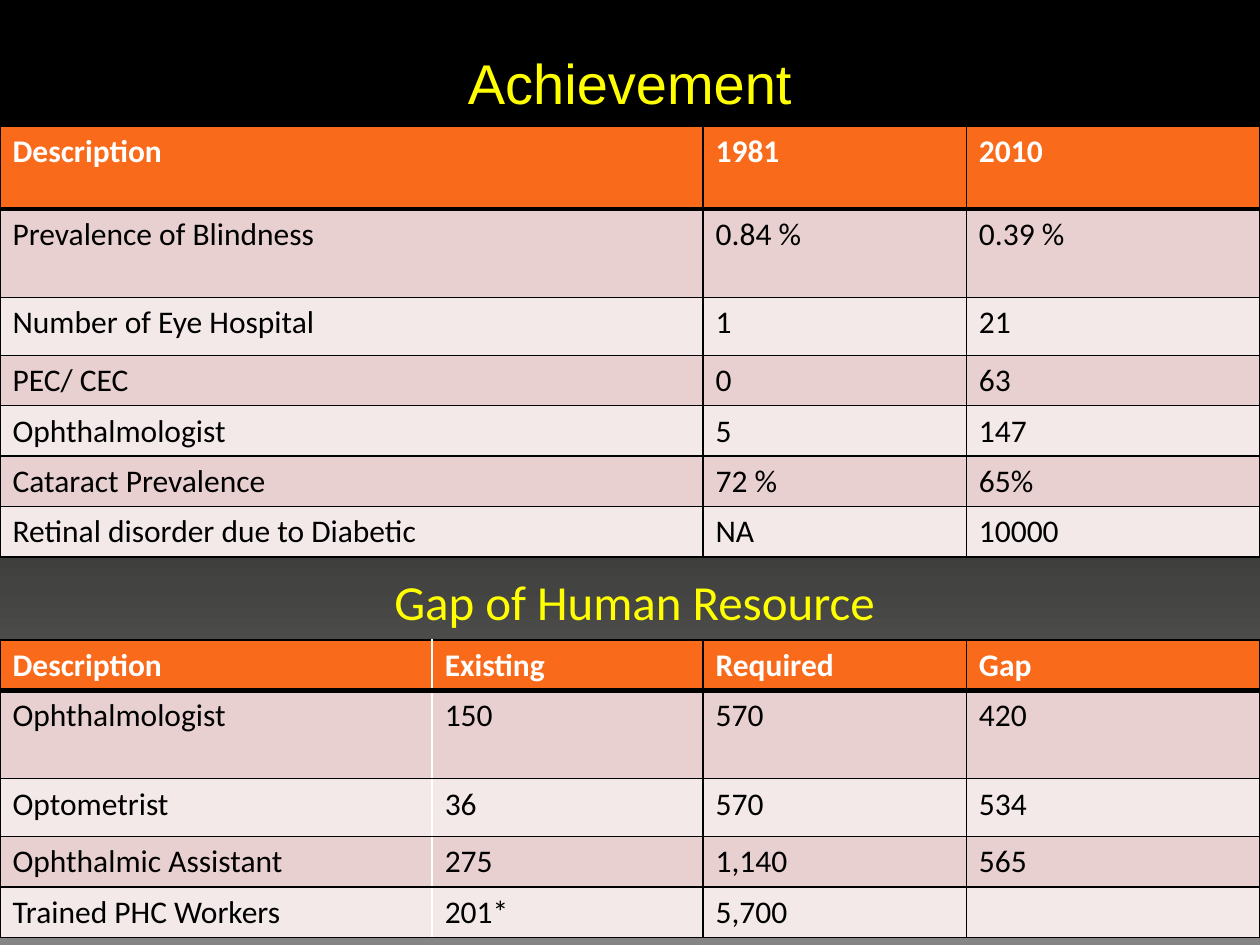
from lxml import etree
from pptx import Presentation
from pptx.dml.color import RGBColor
from pptx.enum.text import MSO_ANCHOR, PP_ALIGN
from pptx.oxml.ns import qn
from pptx.util import Inches, Pt

MIDDLE = MSO_ANCHOR.MIDDLE
CENTER = PP_ALIGN.CENTER
BLACK = RGBColor(0, 0, 0)
WHITE = RGBColor(255, 255, 255)
YELLOW = RGBColor(255, 255, 0)
ORANGE = RGBColor(0xF9, 0x6A, 0x1B)
ROSE = RGBColor(0xE8, 0xD0, 0xD0)
PALE = RGBColor(0xF4, 0xE9, 0xE9)
DARK = RGBColor(0x43, 0x43, 0x42)
GREY = RGBColor(0x85, 0x85, 0x85)

STOPS = [(0, BLACK), (31, BLACK), (62, DARK), (100, GREY)]
RESULTS = [
    ("Description", "1981", "2010"),
    ("Prevalence of Blindness", "0.84 %", "0.39 %"),
    ("Number of Eye Hospital", "1", "21"),
    ("PEC/ CEC", "0", "63"),
    ("Ophthalmologist", "5", "147"),
    ("Cataract Prevalence", "72 %", "65%"),
    ("Retinal disorder due to Diabetic", "NA", "10000"),
]
STAFF = [
    ("Description", "Existing", "Required", "Gap"),
    ("Ophthalmologist", "150", "570", "420"),
    ("Optometrist", "36", "570", "534"),
    ("Ophthalmic Assistant", "275", "1,140", "565"),
    ("Trained PHC Workers", "201*", "5,700", ""),
]


def set_color(parent, color):
    etree.SubElement(parent, qn("a:srgbClr"), val=str(color))


def paint_back(slide):
    fill = slide.background.fill
    fill.gradient()
    fill.gradient_angle = 270
    stops = slide.element.find(".//" + qn("a:gsLst"))
    for stop in list(stops):
        stops.remove(stop)
    for place, color in STOPS:
        stop = etree.SubElement(stops, qn("a:gs"), pos=str(place * 1000))
        set_color(stop, color)


def style_run(run, font, size, color, bold=False):
    run.font.name = font
    run.font.size = Pt(size)
    run.font.color.rgb = color
    run.font.bold = bold


def add_title(slide, box, text, font, size):
    frame = slide.shapes.add_textbox(*map(Inches, box)).text_frame
    frame.word_wrap = True
    frame.vertical_anchor = MIDDLE
    frame.text = text
    line = frame.paragraphs[0]
    line.alignment = CENTER
    style_run(line.runs[0], font, size, YELLOW)


def add_edge(cell, side, color, width):
    props = cell._tc.get_or_add_tcPr()
    edge = etree.SubElement(props, qn("a:ln" + side), w=str(Pt(width)))
    set_color(etree.SubElement(edge, qn("a:solidFill")), color)


def add_grid(slide, box, data, widths, heights, pale_edge=None):
    shape = slide.shapes.add_table(len(data), len(widths), *map(Inches, box))
    table = shape.table
    for col, width in zip(table.columns, widths):
        col.width = Inches(width)
    for row, height in zip(table.rows, heights):
        row.height = Inches(height)
    for r, words in enumerate(data):
        head = r == 0
        for c, text in enumerate(words):
            cell = table.cell(r, c)
            add_edge(cell, "L", WHITE if c == pale_edge else BLACK, 1)
            add_edge(cell, "R", WHITE if c + 1 == pale_edge else BLACK, 1)
            add_edge(cell, "T", BLACK, 3 if r == 1 else 1)
            add_edge(cell, "B", BLACK, 3 if head else 1)
            cell.fill.solid()
            cell.fill.fore_color.rgb = ORANGE if head else ROSE if r % 2 else PALE
            cell.text = text
            for run in cell.text_frame.paragraphs[0].runs:
                style_run(run, "Calibri", 18, WHITE if head else BLACK, head)


def main():
    deck = Presentation()
    deck.slide_width = Inches(10)
    deck.slide_height = Inches(7.5)
    slide = deck.slides.add_slide(deck.slide_layouts[6])
    paint_back(slide)
    add_title(slide, (0.5, 0.3, 9, 0.7), "Achievement", "Arial", 32)
    add_grid(slide, (0, 1, 10, 3.42), RESULTS, [5.58, 2.09, 2.33],
             [0.66, 0.7, 0.46] + [0.4] * 4)
    add_grid(slide, (0, 5.08, 10, 2.36), STAFF, [3.43, 2.15, 2.09, 2.33],
             [0.4, 0.7, 0.46, 0.4, 0.4], pale_edge=1)
    add_title(slide, (0.58, 4.42, 9, 0.7), "Gap of Human Resource ", "Calibri", 28)
    deck.save("out.pptx")


if __name__ == "__main__":
    main()
